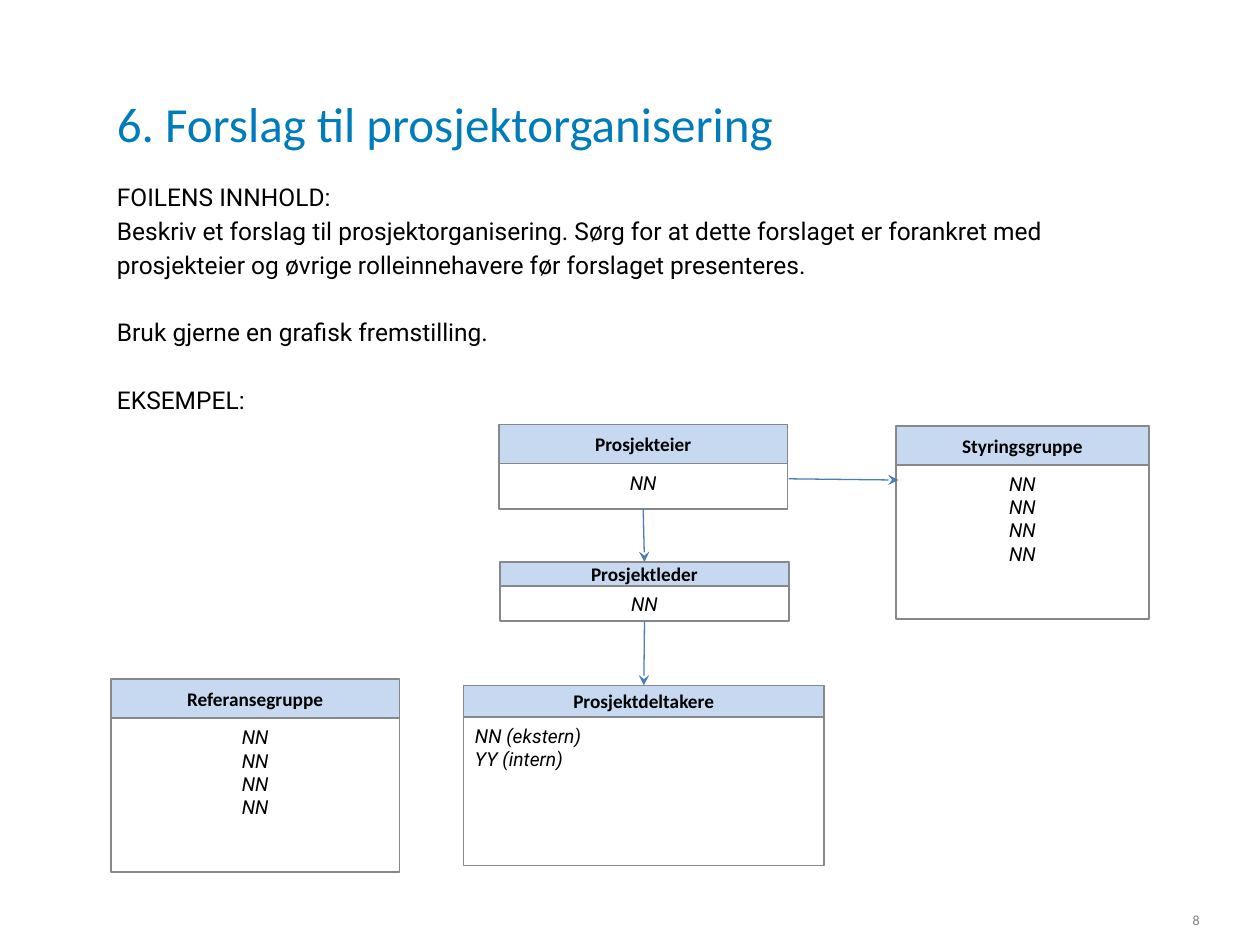
import pptx
import pptx.util
import pptx.dml.color
import pptx.enum.shapes
import pptx.enum.text
import pptx.oxml
import pptx.oxml.ns

Inches = pptx.util.Inches
Pt = pptx.util.Pt
Align = pptx.enum.text.PP_ALIGN
Anchor = pptx.enum.text.MSO_ANCHOR
TOP, BOTTOM = 0, 2


def color(value):
    return pptx.dml.color.RGBColor.from_string(value)


def set_frame(box, anchor, side, vertical):
    frame = box.text_frame
    frame.word_wrap = True
    frame.vertical_anchor = anchor
    frame.margin_left = frame.margin_right = Inches(side)
    frame.margin_top = frame.margin_bottom = Inches(vertical)
    return frame


def write_lines(frame, lines, font, size, ink="000000", align=Align.LEFT,
                bold=False, italic=False):
    for index, line in enumerate(lines):
        para = frame.add_paragraph() if index else frame.paragraphs[0]
        para.text = line
        para.alignment = align
        para.font.name = font
        para.font.size = Pt(size)
        para.font.bold = bold
        para.font.italic = italic
        para.font.color.rgb = color(ink)


def add_text(page, place, lines, font, size, ink="000000", align=Align.LEFT,
             anchor=Anchor.MIDDLE, vertical=0.05):
    box = page.shapes.add_textbox(*map(Inches, place))
    frame = set_frame(box, anchor, 0.1, vertical)
    write_lines(frame, lines, font, size, ink, align)
    return frame


def add_box(page, place, fill, anchor, lines, font, **style):
    box = page.shapes.add_shape(
        pptx.enum.shapes.MSO_SHAPE.RECTANGLE, *map(Inches, place))
    box.shadow.inherit = False
    box.fill.solid()
    box.fill.fore_color.rgb = color(fill)
    box.line.color.rgb = color("87888A")
    box.line.width = Pt(1)
    frame = set_frame(box, anchor, 0.09, 0.06)
    write_lines(frame, lines, font, 11, **style)
    return box


def add_role(page, left, top, width, header_height, body_height, title, names,
             anchor=Anchor.TOP, align=Align.CENTER):
    header = add_box(page, (left, top, width, header_height), "C6D9F1",
                     Anchor.MIDDLE, [title], "Calibri",
                     align=Align.CENTER, bold=True)
    body = add_box(page, (left, top + header_height, width, body_height),
                   "FFFFFF", anchor, names, "Roboto",
                   align=align, italic=True)
    return header, body


def add_arrow(page, start=(0, 0), end=(0, 0)):
    arrow = page.shapes.add_connector(
        pptx.enum.shapes.MSO_CONNECTOR.STRAIGHT, *map(Inches, start + end))
    arrow.line.color.rgb = color("4A7DBA")
    arrow.line.width = Pt(0.75)
    tail = pptx.oxml.parse_xml(
        "<a:tailEnd %s type='stealth'/>" % pptx.oxml.ns.nsdecls("a"))
    arrow.line._get_or_add_ln().append(tail)
    effects = pptx.oxml.parse_xml(
        "<a:effectLst %s/>" % pptx.oxml.ns.nsdecls("a"))
    arrow._element.spPr.append(effects)
    return arrow


def join_down(page, upper, lower):
    arrow = add_arrow(page)
    arrow.begin_connect(upper, BOTTOM)
    arrow.end_connect(lower, TOP)


def add_introduction(page):
    lines = [
        "FOILENS INNHOLD:",
        "Beskriv et forslag til prosjektorganisering. Sørg for at dette "
        "forslaget er forankret med prosjekteier og øvrige rolleinnehavere "
        "før forslaget presenteres.",
        "Bruk gjerne en grafisk fremstilling.",
        "EKSEMPEL:",
    ]
    frame = add_text(page, (0.83, 1.31, 7.97, 1.63), lines, "Roboto", 14,
                     anchor=Anchor.TOP, vertical=0.1)
    for para in frame.paragraphs:
        para.line_spacing = 1.15
    for para in frame.paragraphs[2:]:
        para.space_before = Pt(19.3)


def add_organisation(page):
    group = ["NN"] * 4
    leader_header, leader_body = add_role(
        page, 3.97, 4.46, 2.29, 0.19, 0.28, "Prosjektleder", ["NN"],
        anchor=Anchor.MIDDLE)
    _, owner_body = add_role(
        page, 3.96, 3.37, 2.29, 0.31, 0.36, "Prosjekteier", ["NN"])
    members_header, _ = add_role(
        page, 3.68, 5.44, 2.86, 0.25, 1.18, "Prosjektdeltakere",
        ["NN (ekstern)", "YY (intern)"], align=Align.LEFT)
    join_down(page, owner_body, leader_header)
    join_down(page, leader_body, members_header)
    add_role(page, 0.88, 5.39, 2.29, 0.31, 1.22, "Referansegruppe", group)
    add_role(page, 7.11, 3.38, 2.01, 0.31, 1.22, "Styringsgruppe", group)
    add_arrow(page, (6.26, 3.8), (7.13, 3.81))


def main():
    deck = pptx.Presentation()
    deck.slide_width = Inches(10)
    deck.slide_height = Inches(7.5)
    page = deck.slides.add_slide(deck.slide_layouts[6])
    add_text(page, (0.83, 0.35, 7.8, 1.25),
             ["6. Forslag til prosjektorganisering"], "Calibri", 28, "007CBA")
    add_text(page, (9.06, 7.2, 0.56, 0.2), ["8"], "Calibri", 8, "7F7F7F",
             Align.RIGHT)
    add_organisation(page)
    add_introduction(page)
    deck.save("out.pptx")


if __name__ == "__main__":
    main()
